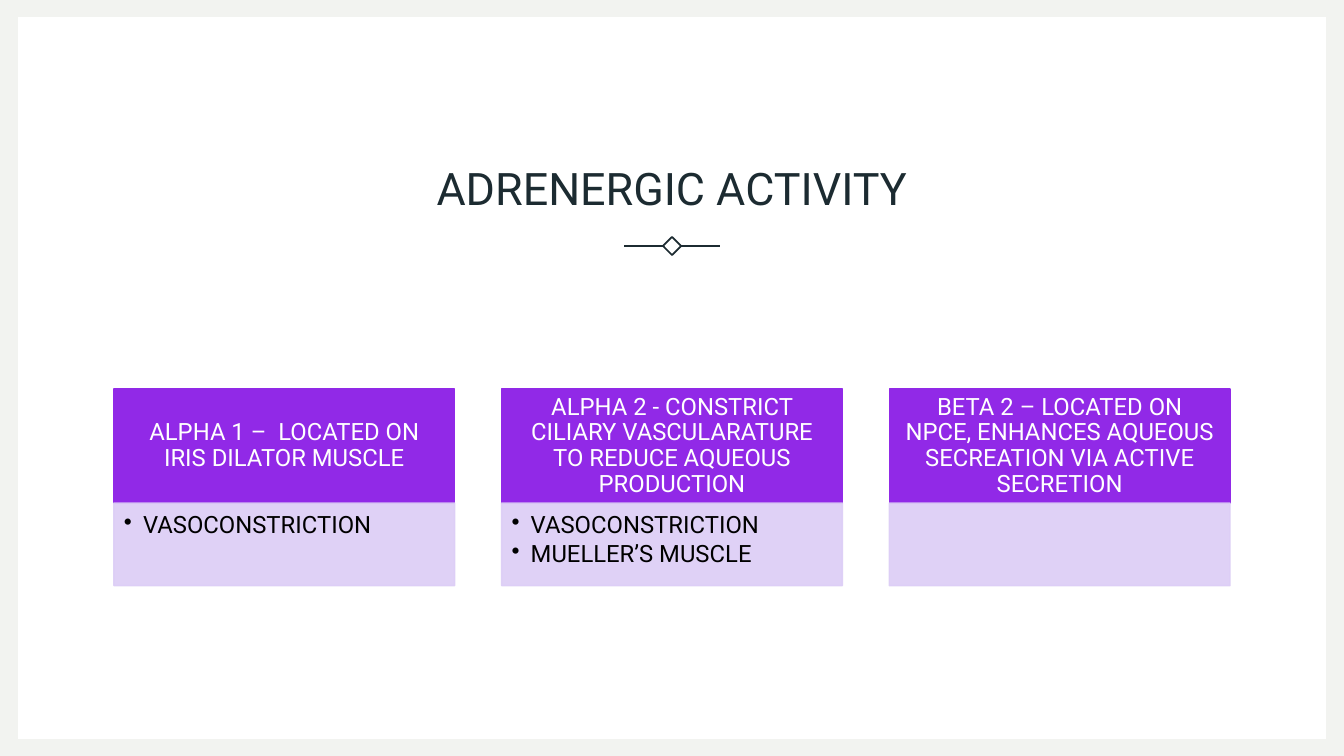
from lxml import etree
from pptx import Presentation
from pptx import util as u
from pptx.dml.color import RGBColor
from pptx.enum import shapes, text
from pptx.oxml.ns import qn

TITLE = "ADRENERGIC ACTIVITY"
RECEPTORS = [
    ("ALPHA 1 –  LOCATED ON IRIS DILATOR MUSCLE", ["VASOCONSTRICTION"]),
    ("ALPHA 2 - CONSTRICT CILIARY VASCULARATURE TO REDUCE AQUEOUS PRODUCTION",
     ["VASOCONSTRICTION", "MUELLER’S MUSCLE"]),
    ("BETA 2 – LOCATED ON NPCE, ENHANCES AQUEOUS SECREATION VIA ACTIVE SECRETION", []),
]
COLORS = {"frame": "F2F3F0", "page": "FFFFFF", "ink": "1C2B31", "header": "9129E7",
          "body": "DCCDF6", "header_text": "FFFFFF", "body_text": "000000"}
FONT = "Roboto"

WIDTH, HEIGHT = 13.33, 7.5
FRAME_X, FRAME_Y = 0.18, 0.17
MARGIN = 1.13
CARD_WIDTH, CARD_TOP = 3.38, 3.86
HEADER_HEIGHT, BODY_HEIGHT = 1.13, 0.82
CARD_STEP = (WIDTH - 2 * MARGIN - CARD_WIDTH) / (len(RECEPTORS) - 1)
DIVIDER_Y, DIVIDER_WIDTH, DIAMOND = 2.44, 0.95, 0.18


def color(name):
    return RGBColor.from_string(COLORS[name])


def add_box(kind, left, top, width, height, fill=None, line=None, weight=1):
    shape = slide.shapes.add_shape(kind, *map(u.Inches, (left, top, width, height)))
    shape.shadow.inherit = False
    if fill:
        shape.fill.solid()
        shape.fill.fore_color.rgb = color(fill)
    else:
        shape.fill.background()
    if line:
        shape.line.color.rgb = color(line)
        shape.line.width = u.Pt(weight)
    else:
        shape.line.fill.background()
    return shape


def set_frame(shape, anchor, insets):
    frame = shape.text_frame
    frame.word_wrap = True
    frame.vertical_anchor = anchor
    (frame.margin_left, frame.margin_top,
     frame.margin_right, frame.margin_bottom) = map(u.Inches, insets)
    return frame


def write(paragraph, words, size, ink, align, spacing):
    paragraph.alignment = align
    paragraph.line_spacing = spacing
    run = paragraph.add_run()
    run.text = words
    run.font.size = u.Pt(size)
    run.font.name = FONT
    run.font.color.rgb = color(ink)


def set_opacity(shape, percent):
    """Make both fill and outline partly transparent."""
    for tint in shape._element.spPr.iter(qn("a:srgbClr")):
        etree.SubElement(tint, qn("a:alpha")).set("val", str(percent * 1000))


def add_bullet(paragraph):
    properties = paragraph._p.get_or_add_pPr()
    properties.set("marL", str(u.Inches(0.19)))
    properties.set("indent", str(-u.Inches(0.19)))
    etree.SubElement(properties, qn("a:buChar")).set("char", "•")


def add_divider():
    middle = WIDTH / 2
    diamond = add_box(shapes.MSO_SHAPE.DIAMOND, middle - DIAMOND / 2, DIVIDER_Y - DIAMOND / 2,
                      DIAMOND, DIAMOND, line="ink", weight=1.25)
    for side, site in ((-1, 1), (1, 3)):
        outer = u.Inches(middle + side * DIVIDER_WIDTH / 2)
        inner = u.Inches(middle + side * DIAMOND / 2)
        y = u.Inches(DIVIDER_Y)
        connector = slide.shapes.add_connector(shapes.MSO_CONNECTOR.STRAIGHT, outer, y, inner, y)
        connector.end_connect(diamond, site)
        connector.line.color.rgb = color("ink")
        connector.line.width = u.Pt(1.25)
        etree.SubElement(connector._element.spPr, qn("a:effectLst"))


def add_card(left, heading, effects):
    rectangle = shapes.MSO_SHAPE.RECTANGLE
    header = add_box(rectangle, left, CARD_TOP, CARD_WIDTH, HEADER_HEIGHT, "header", "header")
    frame = set_frame(header, text.MSO_ANCHOR.MIDDLE, (0.13, 0.08, 0.13, 0.08))
    write(frame.paragraphs[0], heading, 17, "header_text", text.PP_ALIGN.CENTER, 0.9)

    body = add_box(rectangle, left, CARD_TOP + HEADER_HEIGHT, CARD_WIDTH, BODY_HEIGHT,
                   "body", "body")
    set_opacity(body, 90)
    frame = set_frame(body, text.MSO_ANCHOR.TOP, (0.1, 0.1, 0.13, 0.15))
    for index, effect in enumerate(effects):
        paragraph = frame.add_paragraph() if index else frame.paragraphs[0]
        add_bullet(paragraph)
        paragraph.space_after = u.Pt(2.5)
        write(paragraph, effect, 17, "body_text", text.PP_ALIGN.LEFT, 0.9)


presentation = Presentation()
presentation.slide_width = u.Inches(WIDTH)
presentation.slide_height = u.Inches(HEIGHT)
slide = presentation.slides.add_slide(presentation.slide_layouts[6])
slide.background.fill.solid()
slide.background.fill.fore_color.rgb = color("frame")
add_box(shapes.MSO_SHAPE.RECTANGLE, FRAME_X, FRAME_Y,
        WIDTH - 2 * FRAME_X, HEIGHT - 2 * FRAME_Y, "page")

title = slide.shapes.add_textbox(*map(u.Inches, (MARGIN, 1.05, WIDTH - 2 * MARGIN, 1.13)))
title_frame = set_frame(title, text.MSO_ANCHOR.BOTTOM, (0.1, 0.05, 0.1, 0.05))
write(title_frame.paragraphs[0], TITLE, 32, "ink", text.PP_ALIGN.CENTER, 1.1)
add_divider()
for column, (heading, effects) in enumerate(RECEPTORS):
    add_card(MARGIN + column * CARD_STEP, heading, effects)

presentation.save("out.pptx")
